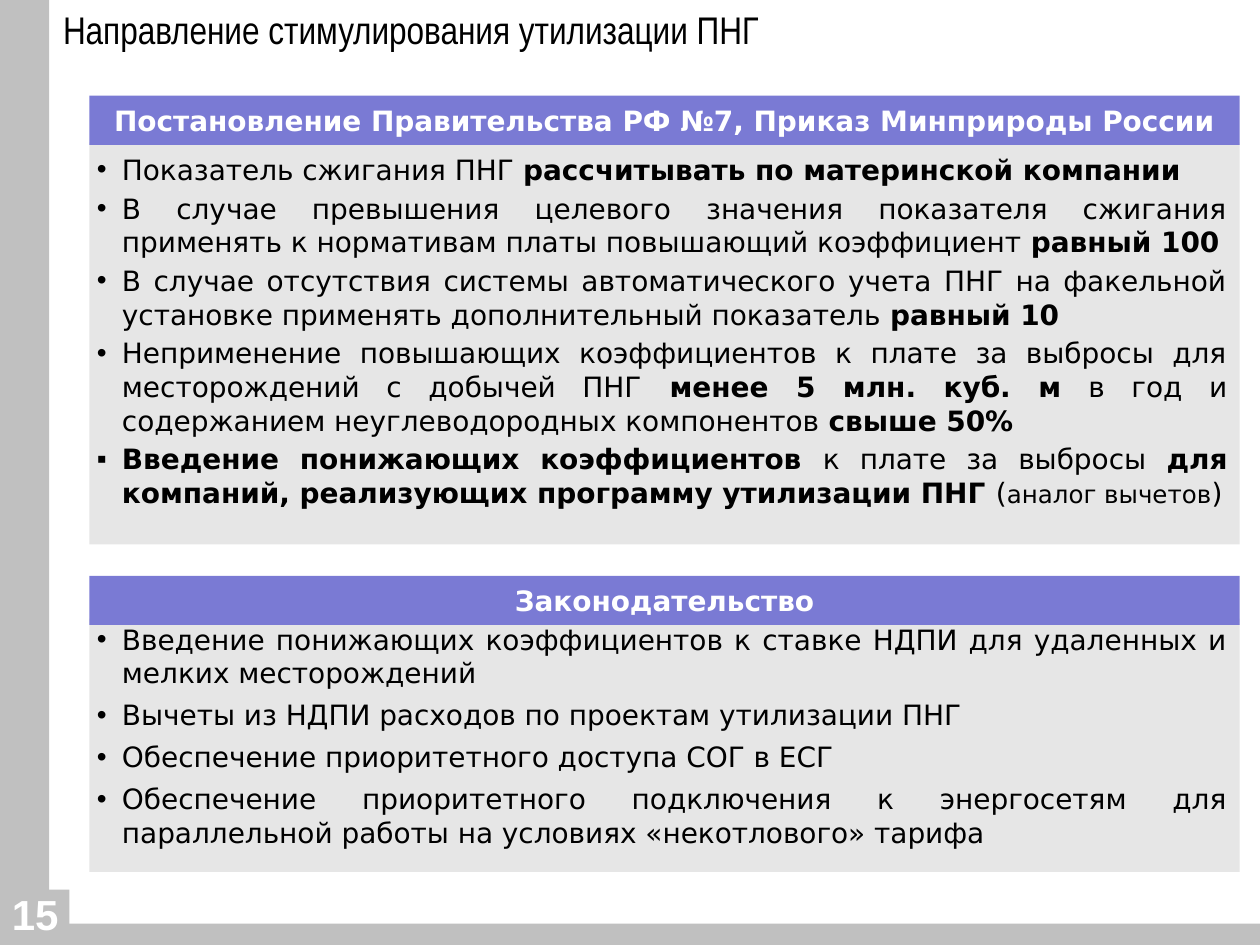
from lxml import etree
from pptx import Presentation
from pptx.dml.color import RGBColor
from pptx.enum.shapes import MSO_SHAPE
from pptx.enum.text import MSO_ANCHOR, PP_ALIGN
from pptx.oxml.ns import qn
from pptx.util import Inches, Pt

COLORS = {"frame": "C0C0C0", "panel": "E6E6E6", "header": "7A7AD4",
          "text": "000000", "light": "FFFFFF"}
BODY_FONT = "DejaVu Sans"
TITLE = "Направление стимулирования утилизации ПНГ"
PAGE_NUMBER = "15"

# Each paragraph is a list of (text, bold) or (text, bold, size) runs.
SECTIONS = [
    {"header": "Постановление Правительства РФ №7, Приказ Минприроды России",
     "top": 0.76, "panel": (1.13, 3.19), "body": (1.16, 3.07), "space": 3,
     "paragraphs": [
         [("Показатель сжигания ПНГ ", False),
          ("рассчитывать по материнской компании", True)],
         [("В случае превышения целевого значения показателя сжигания применять "
           "к нормативам платы повышающий коэффициент ", False),
          ("равный 100", True)],
         [("В случае отсутствия системы автоматического учета ПНГ на факельной "
           "установке применять дополнительный показатель ", False),
          ("равный 10", True)],
         [("Неприменение повышающих коэффициентов к плате за выбросы для "
           "месторождений с добычей ПНГ", False),
          (" менее 5 млн. куб. м", True),
          (" в год и содержанием неуглеводородных компонентов ", False),
          ("свыше 50%", True)],
         [("Введение понижающих коэффициентов ", True),
          ("к плате за выбросы ", False),
          ("для компаний, реализующих программу утилизации ПНГ ", True),
          ("(", False), ("аналог вычетов", False, 14), (")", False)],
     ],
     "bullets": "••••▪"},
    {"header": "Законодательство",
     "top": 4.57, "panel": (4.91, 2.01), "body": (4.89, 2.03), "space": 4.8,
     "paragraphs": [
         [("Введение понижающих коэффициентов к ставке НДПИ для удаленных и "
           "мелких месторождений", False)],
         [("Вычеты из НДПИ расходов по проектам утилизации ПНГ", False)],
         [("Обеспечение приоритетного доступа СОГ в ЕСГ", False)],
         [("Обеспечение приоритетного подключения к энергосетям для "
           "параллельной работы на условиях «некотлового» тарифа", False)],
     ],
     "bullets": "••••"},
]
# Left bar, page number tab, bottom bar; the tab overlaps both bars.
FRAME = [(0, 0, 0.39, 7.1), (0, 7.06, 0.55, 0.32), (0, 7.33, 10, 0.17)]
PANEL_LEFT, PANEL_WIDTH, HEADER_HEIGHT = 0.71, 9.13, 0.39
BODY_LEFT, BODY_WIDTH = 0.67, 9.17


def add_run(paragraph, text, size=16, font=BODY_FONT, color="text", bold=False):
    run = paragraph.add_run()
    run.text = text
    run.font.size = Pt(size)
    run.font.name = font
    run.font.bold = bold
    run.font.color.rgb = RGBColor.from_string(COLORS[color])


def add_rectangle(slide, box, color):
    shape = slide.shapes.add_shape(MSO_SHAPE.RECTANGLE, *map(Inches, box))
    shape.shadow.inherit = False
    shape.fill.solid()
    shape.fill.fore_color.rgb = RGBColor.from_string(COLORS[color])
    shape.line.fill.background()
    return shape


def add_text_box(slide, box):
    frame = slide.shapes.add_textbox(*map(Inches, box)).text_frame
    frame.word_wrap = True
    return frame


def set_bullet(paragraph, character, indent=0.2):
    properties = paragraph._p.get_or_add_pPr()
    properties.set("marL", str(Inches(indent)))
    properties.set("indent", str(-Inches(indent)))
    font = etree.SubElement(properties, qn("a:buFont"))
    font.set("typeface", "Arial")
    bullet = etree.SubElement(properties, qn("a:buChar"))
    bullet.set("char", character)


def add_title(slide):
    title = slide.shapes.title
    title.left, title.top, title.width, title.height = map(Inches, (0.5, 0.09, 9, 0.33))
    frame = title.text_frame
    frame.margin_left = frame.margin_right = frame.margin_top = frame.margin_bottom = 0
    frame.vertical_anchor = MSO_ANCHOR.MIDDLE
    frame.word_wrap = True
    paragraph = frame.paragraphs[0]
    paragraph.alignment = PP_ALIGN.LEFT
    paragraph.line_spacing = 0.9
    add_run(paragraph, TITLE, size=22, font="Arial Narrow")


def add_section(slide, section):
    add_rectangle(slide, (PANEL_LEFT, section["panel"][0], PANEL_WIDTH,
                          section["panel"][1]), "panel")
    header = add_rectangle(slide, (PANEL_LEFT, section["top"], PANEL_WIDTH,
                                   HEADER_HEIGHT), "header")
    header.text_frame.vertical_anchor = MSO_ANCHOR.MIDDLE
    heading = header.text_frame.paragraphs[0]
    heading.alignment = PP_ALIGN.CENTER
    add_run(heading, section["header"], color="light", bold=True)

    top, height = section["body"]
    frame = add_text_box(slide, (BODY_LEFT, top, BODY_WIDTH, height))
    for index, (runs, bullet) in enumerate(zip(section["paragraphs"], section["bullets"])):
        paragraph = frame.add_paragraph() if index else frame.paragraphs[0]
        paragraph.alignment = PP_ALIGN.JUSTIFY
        paragraph.space_before = Pt(section["space"])
        set_bullet(paragraph, bullet)
        for text, bold, *size in runs:
            add_run(paragraph, text, size=size[0] if size else 16, bold=bold)


def main():
    presentation = Presentation()
    presentation.slide_width, presentation.slide_height = Inches(10), Inches(7.5)
    slide = presentation.slides.add_slide(presentation.slide_layouts[5])

    for box in FRAME:
        add_rectangle(slide, box, "frame")
    number = add_text_box(slide, (-0.25, 7, 1.06, 0.5)).paragraphs[0]
    number.alignment = PP_ALIGN.CENTER
    add_run(number, PAGE_NUMBER, size=24, font="Arial", color="light", bold=True)

    add_title(slide)
    for section in SECTIONS:
        add_section(slide, section)
    presentation.save("out.pptx")


if __name__ == "__main__":
    main()
